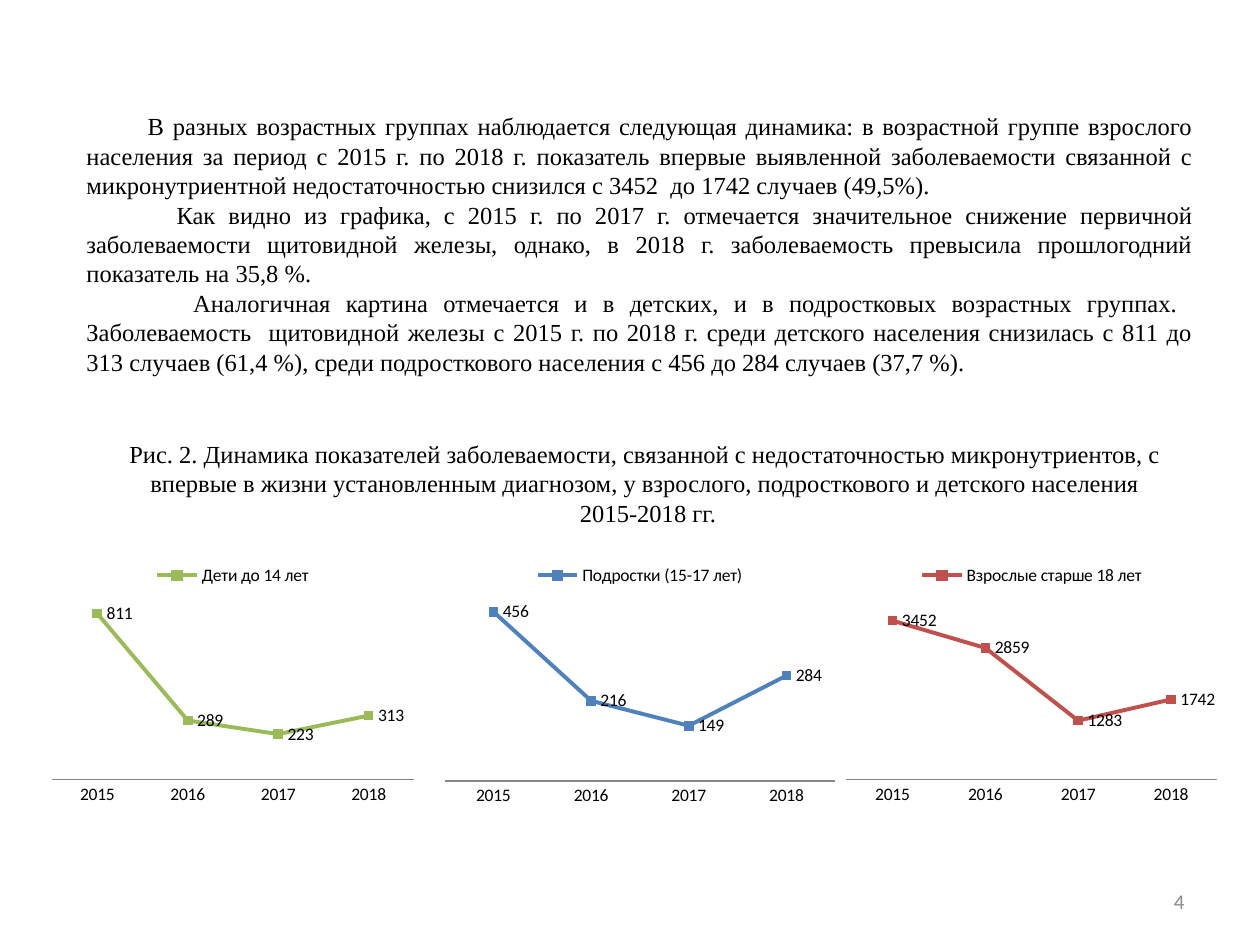
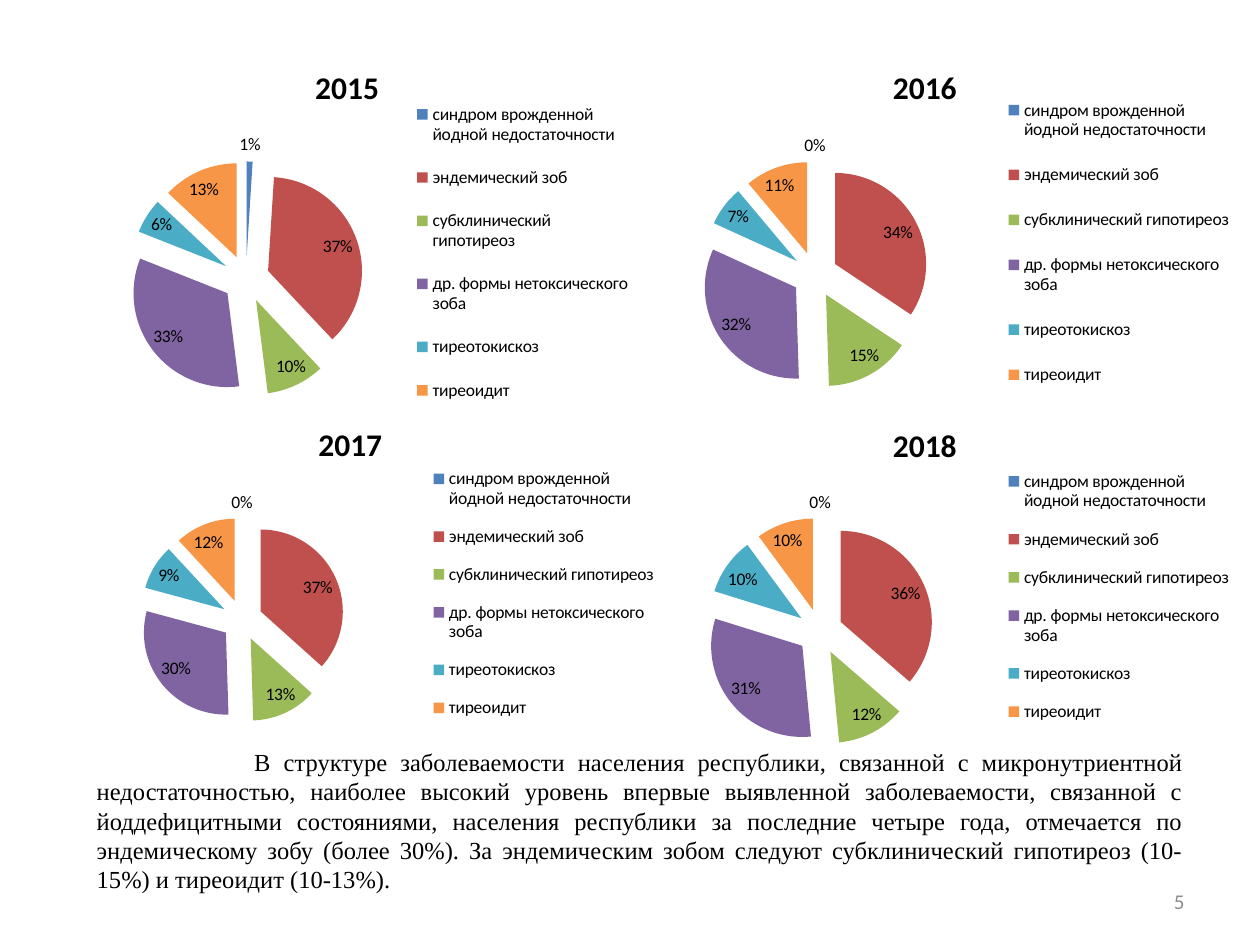
from dataclasses import dataclass

from lxml import etree
from pptx import Presentation
from pptx.chart.data import CategoryChartData
from pptx.dml.color import RGBColor
from pptx.enum.chart import (XL_CHART_TYPE, XL_LABEL_POSITION, XL_LEGEND_POSITION,
                             XL_MARKER_STYLE, XL_TICK_LABEL_POSITION, XL_TICK_MARK)
from pptx.enum.text import MSO_ANCHOR, PP_ALIGN
from pptx.oxml.ns import qn
from pptx.util import Pt

LINE, STACK, PIE = (XL_CHART_TYPE.LINE_MARKERS, XL_CHART_TYPE.LINE_MARKERS_STACKED,
                    XL_CHART_TYPE.PIE)
BESIDE, FIT = XL_LABEL_POSITION.RIGHT, XL_LABEL_POSITION.BEST_FIT
ABOVE, ASIDE = XL_LEGEND_POSITION.TOP, XL_LEGEND_POSITION.RIGHT
SQUARE = XL_MARKER_STYLE.SQUARE
NO_TICK, NO_LABEL = XL_TICK_MARK.NONE, XL_TICK_LABEL_POSITION.NONE
TOP, MIDDLE = MSO_ANCHOR.TOP, MSO_ANCHOR.MIDDLE
CENTER, RIGHT, JUSTIFY = PP_ALIGN.CENTER, PP_ALIGN.RIGHT, PP_ALIGN.JUSTIFY


@dataclass(frozen=True)
class Theme:
    """Colours, fonts and type sizes shared by the slides."""
    ink: str = "000000"
    gray: str = "8C8C8C"
    axis: str = "868686"
    blue: str = "4F81BD"
    red: str = "C0504D"
    green: str = "9BBB59"
    violet: str = "8064A2"
    teal: str = "4BACC6"
    orange: str = "F79646"
    serif: str = "Times New Roman"
    sans: str = "Calibri"
    body: int = 14
    page: int = 12
    label: int = 10
    head: int = 18


THEME = Theme()
SLICES = (THEME.blue, THEME.red, THEME.green, THEME.violet, THEME.teal, THEME.orange)
YEARS = ("2015", "2016", "2017", "2018")
FORMS = ("синдром врожденной йодной недостаточности", "эндемический зоб",
         "субклинический гипотиреоз", "др. формы нетоксического зоба",
         "тиреотокискоз", "тиреоидит")

TRENDS = (
    ("Дети до 14 лет", (811, 289, 223, 313), THEME.green, STACK, 900,
     (25.5, 315.1, 215.3, 147.6)),
    ("Подростки (15-17 лет)", (456, 216, 149, 284), THEME.blue, LINE, 500,
     (249.4, 315.1, 232.6, 148.3)),
    ("Взрослые старше 18 лет", (3452, 2859, 1283, 1742), THEME.red, LINE, 4000,
     (479.1, 315.1, 221, 147.6)),
)
SHARES = (
    ("2015", (1, 37, 10, 33, 6, 13), (31, 25.9, 334.8, 221),
     (140.6, 159.4, 67.1), (242.3, 46.3, 121.1, 196)),
    ("2016", (0, 34, 15, 32, 7, 11), (348.5, 25.9, 360, 216),
     (465.7, 157.1, 65.1), (577.1, 42.9, 128, 191.4)),
    ("2017", (0, 37, 13, 30, 9, 12), (20.2, 230.4, 360, 203.8),
     (138.3, 354.3, 58.6), (248.6, 257.7, 127.4, 162.9)),
    ("2018", (0, 36, 12, 31, 10, 10), (348.5, 230.4, 360, 216),
     (468.6, 360.9, 65.1), (577.1, 258.9, 128, 164)),
)

TRENDS_TEXT = (
    "В разных возрастных группах наблюдается следующая динамика: в возрастной группе "
    "взрослого населения за период с 2015 г. по 2018 г. показатель впервые выявленной "
    "заболеваемости связанной с микронутриентной недостаточностью снизился с 3452  до "
    "1742 случаев (49,5%).",
    "Как видно из графика, с 2015 г. по 2017 г. отмечается значительное снижение "
    "первичной заболеваемости щитовидной железы, однако, в 2018 г. заболеваемость "
    "превысила прошлогодний показатель на 35,8 %.",
    "Аналогичная картина отмечается и в детских, и в подростковых возрастных группах.  "
    "Заболеваемость  щитовидной железы с 2015 г. по 2018 г. среди детского населения "
    "снизилась с 811 до 313 случаев (61,4 %), среди подросткового населения с 456 до "
    "284 случаев (37,7 %).",
)
CAPTION = (
    "Рис. 2. Динамика показателей заболеваемости, связанной с недостаточностью "
    "микронутриентов, с впервые в жизни установленным диагнозом, у взрослого, "
    "подросткового и детского населения",
    "2015-2018 гг.",
)
SHARES_TEXT = (
    "В структуре заболеваемости населения республики, связанной с микронутриентной "
    "недостаточностью, наиболее высокий уровень впервые выявленной заболеваемости, "
    "связанной с йоддефицитными состояниями, населения республики за последние четыре "
    "года, отмечается по эндемическому зобу (более 30%). За эндемическим зобом следуют "
    "субклинический гипотиреоз (10-15%) и тиреоидит (10-13%).",
)


def place(box):
    """Turn a box in points into lengths."""
    return [Pt(side) for side in box]


def paint(font, size, color=THEME.ink, face=THEME.sans, bold=False):
    """Set the face, size and colour of a font."""
    font.name, font.size, font.bold = face, Pt(size), bold
    font.color.rgb = RGBColor.from_string(color)


def fill(form, color):
    """Give a chart element a solid fill."""
    form.fill.solid()
    form.fill.fore_color.rgb = RGBColor.from_string(color)


def write(slide, box, lines, *, size=THEME.body, color=THEME.ink, face=THEME.serif,
          align=JUSTIFY, anchor=TOP, indents=()):
    """Add a text box with one paragraph per line."""
    frame = slide.shapes.add_textbox(*place(box)).text_frame
    frame.word_wrap, frame.vertical_anchor = True, anchor
    for spot, line in enumerate(lines):
        para = frame.add_paragraph() if spot else frame.paragraphs[0]
        para.alignment = align
        if indents:
            para._p.get_or_add_pPr().set("indent", str(Pt(indents[spot])))
        run = para.add_run()
        run.text = line
        paint(run.font, size, color, face)


def number(slide, page):
    """Add the page number."""
    write(slide, (516.2, 500.4, 167.8, 28.8), [str(page)], size=THEME.page,
          color=THEME.gray, face=THEME.sans, align=RIGHT, anchor=MIDDLE)


def chart(slide, kind, box, cats, name, values, side):
    """Add a chart of one series with its legend."""
    data = CategoryChartData()
    data.categories = cats
    data.add_series(name, values)
    graph = slide.shapes.add_chart(kind, *place(box), data).chart
    paint(graph.font, THEME.label)
    graph.has_title = False
    graph.has_legend = True
    graph.legend.position = side
    graph.legend.include_in_layout = False
    graph.plots[0].has_data_labels = True
    return graph


def trend(slide, name, values, color, kind, peak, box):
    """Add a line chart of cases by year."""
    graph = chart(slide, kind, box, YEARS, name, values, ABOVE)
    marks = graph.plots[0].data_labels
    marks.show_value, marks.position = True, BESIDE
    series = graph.plots[0].series[0]
    series.smooth = False
    series.format.line.width = Pt(2.25)
    series.format.line.color.rgb = RGBColor.from_string(color)
    series.marker.style, series.marker.size = SQUARE, 5
    fill(series.marker.format, color)
    series.marker.format.line.color.rgb = RGBColor.from_string(color)
    years, scale = graph.category_axis, graph.value_axis
    years.major_tick_mark = NO_TICK
    years.format.line.width = Pt(0.75)
    years.format.line.color.rgb = RGBColor.from_string(THEME.axis)
    scale.minimum_scale, scale.maximum_scale = 0, peak
    scale.has_major_gridlines = scale.visible = False
    scale.tick_label_position = NO_LABEL


def layout(part, area, box, inner=False):
    """Build the layout of a chart part at an area of the slide."""
    for old in part.findall(qn("c:layout")):
        part.remove(old)
    node = etree.Element(qn("c:layout"))
    spot = etree.SubElement(node, qn("c:manualLayout"))
    if inner:
        etree.SubElement(spot, qn("c:layoutTarget"), val="inner")
    for mode in ("xMode", "yMode"):
        etree.SubElement(spot, qn(f"c:{mode}"), val="edge")
    left, top, width, height = box
    ratios = ((area[0] - left) / width, (area[1] - top) / height,
              area[2] / width, area[3] / height)
    for key, ratio in zip("xywh", ratios):
        etree.SubElement(spot, qn(f"c:{key}"), val=f"{ratio:.4f}")
    return node


def pie(slide, year, values, box, disc, key):
    """Add an exploded pie of the forms of disease in a year."""
    graph = chart(slide, PIE, box, FORMS, year, values, ASIDE)
    graph.has_title = True
    title = graph.chart_title.text_frame
    title.text = year
    paint(title.paragraphs[0].runs[0].font, THEME.head, bold=True)
    plot = graph.plots[0]
    plot.vary_by_categories = True
    marks = plot.data_labels
    marks.show_value, marks.show_percentage, marks.position = False, True, FIT
    marks.number_format, marks.number_format_is_linked = "0%", False
    series = plot.series[0]
    for spot, color in enumerate(SLICES):
        fill(series.points[spot].format, color)
    burst = etree.Element(qn("c:explosion"), val="25")
    series._element.find(qn("c:dPt")).addprevious(burst)

    across, down, reach = disc
    area = (across - reach, down - reach, 2 * reach, 2 * reach)
    ground = graph._chartSpace.chart.plotArea
    ground.insert(0, layout(ground, area, box, inner=True))
    legend = graph.legend._element
    legend.find(qn("c:legendPos")).addnext(layout(legend, key, box))
    if not values[0]:
        write(slide, (across - 20, down - reach - 19.2, 40, 20), ["0%"],
              size=THEME.label, face=THEME.sans, align=CENTER, anchor=MIDDLE)


def main():
    """Build both slides and save them."""
    deck = Presentation()
    deck.slide_width, deck.slide_height = Pt(720), Pt(540)
    blank = deck.slide_layouts[6]

    slide = deck.slides.add_slide(blank)
    for item in TRENDS:
        trend(slide, *item)
    write(slide, (42.3, 60.1, 646.6, 159.8), TRENDS_TEXT, indents=(35, 51.5, 61))
    write(slide, (48.2, 247.3, 640.8, 58.3), CAPTION, align=CENTER, indents=(0, 3.5))
    number(slide, 4)

    slide = deck.slides.add_slide(blank)
    for item in SHARES:
        pie(slide, *item)
    write(slide, (48.2, 423.2, 635, 92.2), SHARES_TEXT, indents=(90,))
    number(slide, 5)

    deck.save("out.pptx")


if __name__ == "__main__":
    main()
